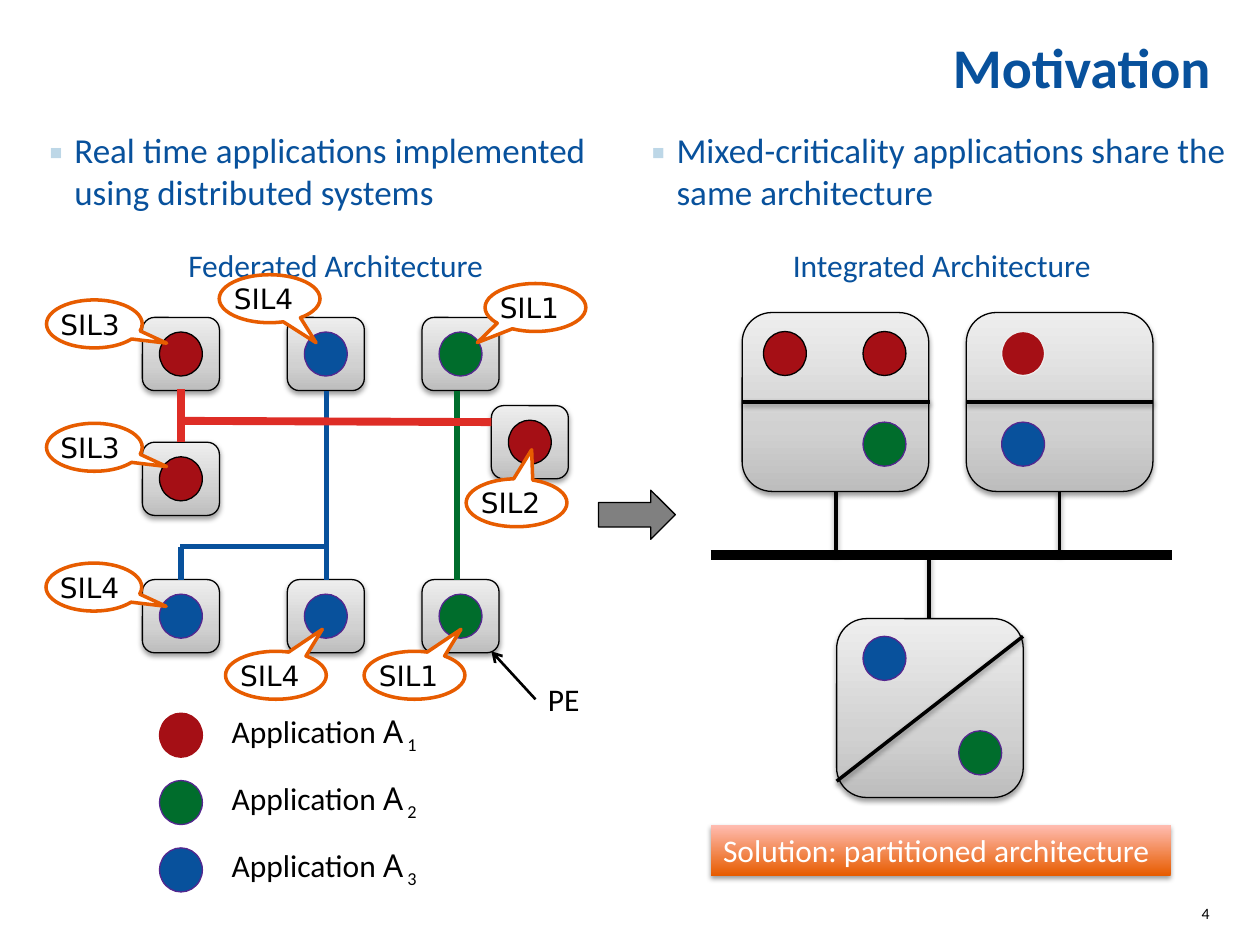
import copy

import pptx
import pptx.dml.color
import pptx.enum.shapes
import pptx.enum.text
import pptx.oxml.ns
import pptx.util
from lxml import etree

Pt = pptx.util.Pt
RGBColor = pptx.dml.color.RGBColor
SHAPE = pptx.enum.shapes.MSO_SHAPE
ALIGN = pptx.enum.text.PP_ALIGN
ANCHOR = pptx.enum.text.MSO_ANCHOR
qn = pptx.oxml.ns.qn

BLACK = RGBColor(0x00, 0x00, 0x00)
WHITE = RGBColor(0xFF, 0xFF, 0xFF)
GRAY = RGBColor(0x80, 0x80, 0x80)
PALE_GRAY = RGBColor(0xED, 0xED, 0xED)
BLUE = RGBColor(0x08, 0x51, 0x9C)
PALE_BLUE = RGBColor(0xBD, 0xD7, 0xE7)
GREEN = RGBColor(0x00, 0x6D, 0x2C)
RED = RGBColor(0xA5, 0x0F, 0x15)
BUS_RED = RGBColor(0xDE, 0x2D, 0x26)
PURPLE = RGBColor(0x54, 0x27, 0x8F)
ORANGE = RGBColor(0xE7, 0x5C, 0x00)
NODE_GRADIENT = [(0, RGBColor(0xBD, 0xBD, 0xBD)), (0.35, RGBColor(0xD1, 0xD1, 0xD1)),
                 (1, RGBColor(0xEE, 0xEE, 0xEE))]
SOLUTION_GRADIENT = [(0, ORANGE), (1, RGBColor(0xFF, 0xBC, 0xB1))]

TITLE = "Motivation"
LISTS = [(28.1, "Real time applications implemented using distributed systems"),
         (372.2, "Mixed-criticality applications share the same architecture")]
HEADINGS = [(25.9, "Federated Architecture"), (372.2, "Integrated Architecture")]
SOLUTION = "Solution: partitioned architecture"

OUTLINES = {RED: BLACK, GREEN: PURPLE, BLUE: PURPLE}
NODE_SIZE = (44, 41.8)
DOT_SIZE = (24.5, 25.2)
COLUMNS = (81.4, 164.2, 241.2)
TOP, MIDDLE, BOTTOM = 181.4, 252.7, 331.2
NODES = [(COLUMNS[0], TOP, RED), (COLUMNS[1], TOP, BLUE), (COLUMNS[2], TOP, GREEN),
         (COLUMNS[0], MIDDLE, RED), (280.8, 231.8, RED), (COLUMNS[0], BOTTOM, BLUE),
         (COLUMNS[1], BOTTOM, BLUE), (COLUMNS[2], BOTTOM, GREEN)]
WIRES = [(186.5, 223.2, 186.5, 331.2, BLUE, 3), (103.5, 312.5, 103.5, 331.2, BLUE, 3),
         (186.5, 312.5, 103, 312.5, BLUE, 3), (261.2, 223.2, 261.2, 331.2, GREEN, 3),
         (105, 240.5, 280.8, 241.2, BUS_RED, 4.5), (103.2, 222.5, 103.2, 252.7, BUS_RED, 4.5)]
LEGEND = [(1, RED, RED), (2, GREEN, PURPLE), (3, BLUE, PURPLE)]
LEGEND_TOP, LEGEND_STEP = 403.2, 38.5

BLOCK_SIZE = (106.6, 102.2)
BLOCKS = [(424.1, 178.6), (552.2, 178.6), (478.1, 353.5)]
LINKS = [(477.7, 280.8, 477.7, 317), (605.5, 280.8, 605.5, 317), (531, 317, 531, 353.5)]
DIVIDERS = [(424.1, 229.7, 531.4, 229.7), (552.2, 229.7, 658.8, 229.7),
            (478.1, 446.4, 584.6, 363.6)]
TASKS = [(436.3, 189.4, RED, BLACK), (572.4, 189.4, RED, PALE_GRAY), (493.2, 189.4, RED, BLACK),
         (572.4, 241.2, BLUE, PURPLE), (493.2, 363.6, BLUE, PURPLE),
         (493.2, 241.2, GREEN, PURPLE), (547.9, 417.6, GREEN, PURPLE)]
CALLOUTS = [("SIL3", 26.6, 171.4, 54.7, 0.755, 0.401), ("SIL3", 26.6, 241.9, 54.7, 0.755, 0.401),
            ("SIL4", 26.3, 321.8, 54.7, 0.755, 0.401), ("SIL4", 125.3, 157, 57.6, 0.461, 0.916),
            ("SIL4", 128.9, 372.2, 57.6, 0.461, -0.96), ("SIL1", 208.1, 372.2, 57.6, 0.461, -0.96),
            ("SIL2", 266.4, 273.6, 57.6, 0.15, -1.107), ("SIL1", 277.2, 162, 57.6, -0.577, 0.732)]


def write(box, text, size=18, color=BLACK, font="Calibri", bold=False, align=ALIGN.LEFT,
          anchor=ANCHOR.TOP, margins=(7.2, 3.6), wrap=True, line_spacing=None, before=0):
    frame = box.text_frame
    frame.word_wrap = wrap
    frame.auto_size = pptx.enum.text.MSO_AUTO_SIZE.NONE
    frame.vertical_anchor = anchor
    frame.margin_left = frame.margin_right = Pt(margins[0])
    frame.margin_top = frame.margin_bottom = Pt(margins[1])
    para = frame.paragraphs[0]
    para.alignment = align
    para.space_before = Pt(before)
    if line_spacing:
        para.line_spacing = line_spacing
    spans = [(text, font, 0)] if isinstance(text, str) else text
    for words, face, baseline in spans:
        span = para.add_run()
        span.text = words
        span.font.name = face
        span.font.size = Pt(size)
        span.font.bold = bold
        span.font.color.rgb = color
        if baseline:
            span.font._element.set("baseline", str(baseline * 1000))
    return para


def place(box, left, top, width, height):
    box.left, box.top, box.width, box.height = Pt(left), Pt(top), Pt(width), Pt(height)


def add_text(page, text, left, top, width, height, **style):
    box = page.shapes.add_textbox(Pt(left), Pt(top), Pt(width), Pt(height))
    write(box, text, **style)


def set_effects(item, shadow):
    effects = etree.SubElement(item._element.spPr, qn("a:effectLst"))
    if shadow:
        outer = etree.SubElement(effects, qn("a:outerShdw"), blurRad=str(Pt(3.1)),
                                 dist=str(Pt(1.6)), dir="5400000", rotWithShape="0")
        color = etree.SubElement(outer, qn("a:srgbClr"), val="000000")
        etree.SubElement(color, qn("a:alpha"), val="38000")


def set_gradient(fill, stops):
    fill.gradient()
    fill.gradient_angle = 90
    first = fill.gradient_stops[0]._gs
    for extra in range(len(stops) - len(fill.gradient_stops)):
        first.addnext(copy.deepcopy(first))
    for stop, (position, color) in zip(fill.gradient_stops, stops):
        stop.position = position
        stop.color.rgb = color


def add_shape(page, kind, left, top, width, height, fill, outline=BLACK, weight=0.75, shadow=False):
    shape = page.shapes.add_shape(kind, Pt(left), Pt(top), Pt(width), Pt(height))
    if isinstance(fill, list):
        set_gradient(shape.fill, fill)
    else:
        shape.fill.solid()
        shape.fill.fore_color.rgb = fill
    if outline is None:
        shape.line.fill.background()
    else:
        shape.line.color.rgb = outline
        shape.line.width = Pt(weight)
    set_effects(shape, shadow)
    return shape


def add_line(page, x1, y1, x2, y2, color=BLACK, weight=2, shadow=False, arrow=False):
    line = page.shapes.add_connector(pptx.enum.shapes.MSO_CONNECTOR.STRAIGHT,
                                     Pt(x1), Pt(y1), Pt(x2), Pt(y2))
    line.line.color.rgb = color
    line.line.width = Pt(weight)
    if arrow:
        etree.SubElement(line.line._get_or_add_ln(), qn("a:tailEnd"), type="arrow")
    set_effects(line, shadow)


def add_bullet(para):
    properties = para._p.get_or_add_pPr()
    properties.set("marL", str(Pt(14.4)))
    properties.set("indent", str(Pt(-17.3)))
    color = etree.SubElement(properties, qn("a:buClr"))
    etree.SubElement(color, qn("a:srgbClr"), val=str(PALE_BLUE))
    etree.SubElement(properties, qn("a:buFont"), typeface="Noto Sans")
    etree.SubElement(properties, qn("a:buChar"), char="▪")


def add_headers(page):
    place(page.shapes.title, 28.1, 0, 663.8, 56.9)
    write(page.shapes.title, TITLE, size=32, color=BLUE, bold=True, align=ALIGN.RIGHT,
          anchor=ANCHOR.BOTTOM, margins=(0, 0), line_spacing=0.8)
    for index, (left, text) in enumerate(LISTS, start=1):
        body = page.placeholders[index]
        place(body, left, 73.4, 331.9, 50.4)
        add_bullet(write(body, text, size=20, color=BLUE, margins=(0, 0), before=5))
    for left, text in HEADINGS:
        add_text(page, text, left, 136.8, 331.9, 28.8, color=BLUE, align=ALIGN.CENTER)
    add_text(page, "4", 667.4, 516.2, 23.8, 23.8, size=9, align=ALIGN.RIGHT, margins=(0, 0))


def add_federated(page):
    for left, top, color in NODES:
        add_shape(page, SHAPE.ROUNDED_RECTANGLE, left, top, *NODE_SIZE, NODE_GRADIENT, shadow=True)
    for wire in WIRES:
        add_line(page, *wire)
    inset_x, inset_y = [(node - dot) / 2 for node, dot in zip(NODE_SIZE, DOT_SIZE)]
    for left, top, color in NODES:
        add_shape(page, SHAPE.OVAL, left + inset_x, top + inset_y, *DOT_SIZE, color, OUTLINES[color])
    add_line(page, 306, 399.6, 280.8, 372.2, weight=1.5, arrow=True)
    add_text(page, "PE", 306, 385.2, 33.1, 28.8, wrap=False)
    for row, (number, color, outline) in enumerate(LEGEND):
        top = LEGEND_TOP + row * LEGEND_STEP
        add_shape(page, SHAPE.OVAL, 91.2, top + 4.3, *DOT_SIZE, color, outline)
        label = [("Application ", "Calibri", 0), ("A", "Noto Sans", 0), (f" {number}", "Calibri", -25)]
        add_text(page, label, 125.3, top, 128.9, 28.8, wrap=False)


def add_integrated(page):
    for link in LINKS:
        add_line(page, *link, shadow=True)
    add_line(page, 406.1, 317, 669.6, 317, weight=5.75)
    for left, top in BLOCKS:
        add_shape(page, SHAPE.ROUNDED_RECTANGLE, left, top, *BLOCK_SIZE, NODE_GRADIENT, shadow=True)
    for left, top, color, outline in TASKS:
        add_shape(page, SHAPE.OVAL, left, top, *DOT_SIZE, color, outline)
    for divider in DIVIDERS:
        add_line(page, *divider, shadow=True)
    solution = add_shape(page, SHAPE.RECTANGLE, 406.1, 471.6, 262.8, 28.8, SOLUTION_GRADIENT,
                         outline=None, shadow=True)
    write(solution, SOLUTION, color=WHITE)


def add_callouts(page):
    for text, left, top, width, tip_x, tip_y in CALLOUTS:
        callout = add_shape(page, SHAPE.OVAL_CALLOUT, left, top, width, 27.4, WHITE, ORANGE, 2)
        callout.adjustments[0] = tip_x
        callout.adjustments[1] = tip_y
        write(callout, text, size=16, font="DejaVu Sans", anchor=ANCHOR.MIDDLE, margins=(0, 0))


def main():
    deck = pptx.Presentation()
    deck.slide_width, deck.slide_height = Pt(720), Pt(540)
    page = deck.slides.add_slide(deck.slide_layouts[3])
    add_headers(page)
    add_federated(page)
    add_integrated(page)
    add_shape(page, SHAPE.RIGHT_ARROW, 342, 280.1, 43.9, 28.1, GRAY)
    add_callouts(page)
    deck.save("out.pptx")


if __name__ == "__main__":
    main()
